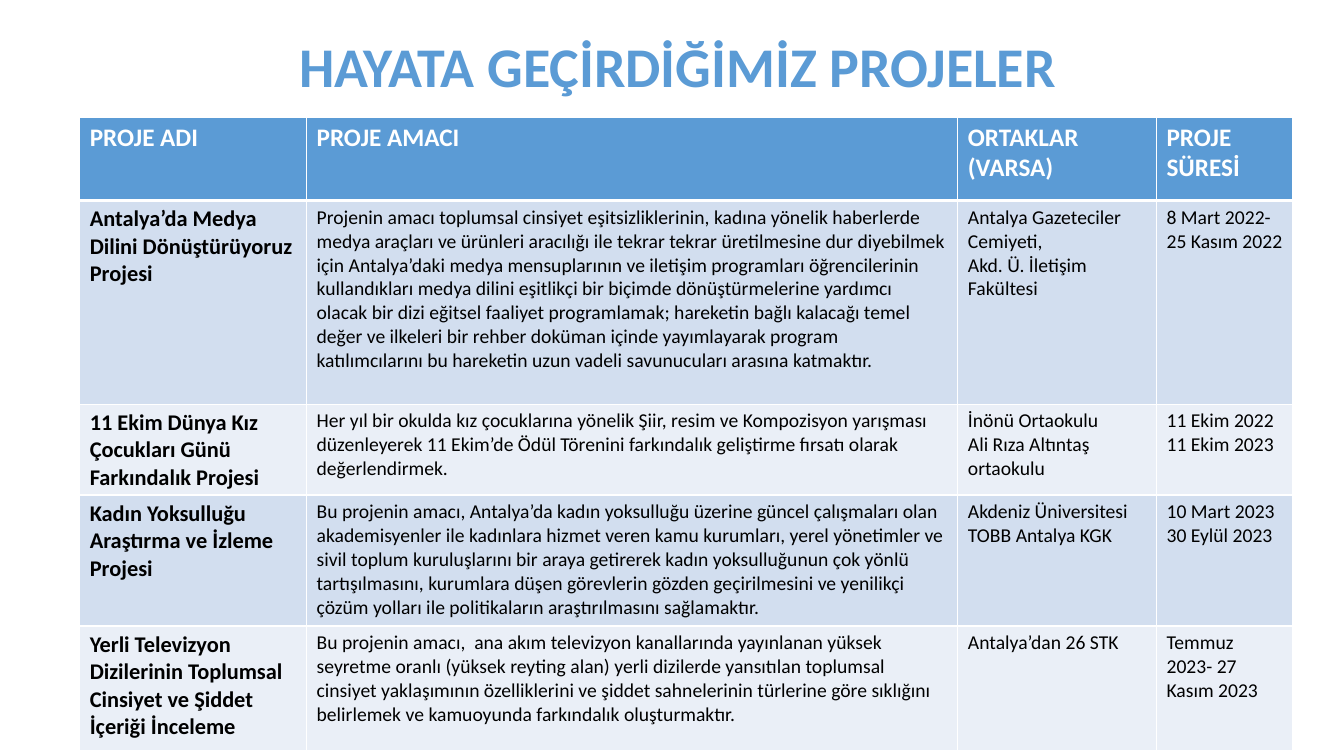
from dataclasses import dataclass

from lxml.etree import SubElement
from pptx import Presentation
from pptx.dml.color import RGBColor
from pptx.enum.text import MSO_ANCHOR, PP_ALIGN
from pptx.oxml.ns import qn
from pptx.slide import Slide
from pptx.table import _Cell
from pptx.util import Inches, Pt

PAGE_WIDTH = Inches(13.33)
PAGE_HEIGHT = Inches(7.5)
FONT = "Calibri"
COLORS = {
    "accent": "5B9BD5",
    "white": "FFFFFF",
    "black": "000000",
    "odd": "D2DEEF",
    "even": "EAEFF7",
}
COLUMN_SHARES = (16.88, 48.46, 14.78, 10.13)
ROW_SHARES = (11.07, 26.93, 11.6, 17.33, 16.53)


@dataclass(frozen=True)
class Area:
    left: float
    top: float
    width: float
    height: float


@dataclass(frozen=True)
class TextStyle:
    size: int
    color: str
    bold: bool = False


@dataclass(frozen=True)
class Project:
    name: str
    aim: str
    partners: str
    period: str


TITLE_AREA = Area(7.28, 3.2, 86.27, 11.87)
TABLE_AREA = Area(5.93, 15.47, sum(COLUMN_SHARES), sum(ROW_SHARES))
TITLE_STYLE = TextStyle(40, "accent", True)
HEADER_STYLE = TextStyle(18, "white", True)
NAME_STYLE = TextStyle(16, "black", True)
BODY_STYLE = TextStyle(14, "black")

HEADERS = ("PROJE ADI", "PROJE AMACI", "ORTAKLAR (VARSA)", "PROJE SÜRESİ")
PROJECTS = (
    Project(
        "Antalya’da Medya Dilini Dönüştürüyoruz Projesi",
        "Projenin amacı toplumsal cinsiyet eşitsizliklerinin, kadına yönelik haberlerde "
        "medya araçları ve ürünleri aracılığı ile tekrar tekrar üretilmesine dur diyebilmek "
        "için Antalya’daki medya mensuplarının ve iletişim programları öğrencilerinin "
        "kullandıkları medya dilini eşitlikçi bir biçimde dönüştürmelerine yardımcı "
        "olacak bir dizi eğitsel faaliyet programlamak; hareketin bağlı kalacağı temel "
        "değer ve ilkeleri bir rehber doküman içinde yayımlayarak program "
        "katılımcılarını bu hareketin uzun vadeli savunucuları arasına katmaktır.",
        "Antalya Gazeteciler Cemiyeti,\nAkd. Ü. İletişim Fakültesi",
        "8 Mart 2022-\n25 Kasım 2022",
    ),
    Project(
        "11 Ekim Dünya Kız Çocukları Günü Farkındalık Projesi",
        "Her yıl bir okulda kız çocuklarına yönelik Şiir, resim ve Kompozisyon yarışması "
        "düzenleyerek 11 Ekim’de Ödül Törenini farkındalık geliştirme fırsatı olarak "
        "değerlendirmek.",
        "İnönü Ortaokulu\nAli Rıza Altıntaş ortaokulu",
        "11 Ekim 2022\n11 Ekim 2023",
    ),
    Project(
        "Kadın Yoksulluğu Araştırma ve İzleme Projesi",
        "Bu projenin amacı, Antalya’da kadın yoksulluğu üzerine güncel çalışmaları olan "
        "akademisyenler ile kadınlara hizmet veren kamu kurumları, yerel yönetimler ve "
        "sivil toplum kuruluşlarını bir araya getirerek kadın yoksulluğunun çok yönlü "
        "tartışılmasını, kurumlara düşen görevlerin gözden geçirilmesini ve yenilikçi "
        "çözüm yolları ile politikaların araştırılmasını sağlamaktır.",
        "Akdeniz Üniversitesi\nTOBB Antalya KGK",
        "10 Mart 2023\n30 Eylül 2023",
    ),
    Project(
        "Yerli Televizyon Dizilerinin Toplumsal  Cinsiyet ve Şiddet İçeriği İnceleme",
        "Bu projenin amacı,  ana akım televizyon kanallarında yayınlanan yüksek "
        "seyretme oranlı (yüksek reyting alan) yerli dizilerde yansıtılan toplumsal "
        "cinsiyet yaklaşımının özelliklerini ve şiddet sahnelerinin türlerine göre sıklığını "
        "belirlemek ve kamuoyunda farkındalık oluşturmaktır.",
        "Antalya’dan 26 STK",
        "Temmuz 2023- 27 Kasım 2023",
    ),
)


def across(share: float) -> int:
    return round(PAGE_WIDTH * share / 100)


def down(share: float) -> int:
    return round(PAGE_HEIGHT * share / 100)


def frame(area: Area) -> tuple[int, int, int, int]:
    return across(area.left), down(area.top), across(area.width), down(area.height)


def write_text(text_frame, text: str, style: TextStyle) -> None:
    text_frame.text = text
    for para in text_frame.paragraphs:
        para.font.name = FONT
        para.font.size = Pt(style.size)
        para.font.bold = style.bold
        para.font.color.rgb = RGBColor.from_string(COLORS[style.color])


def add_borders(cell: _Cell, top: float, bottom: float) -> None:
    properties = cell._tc.get_or_add_tcPr()
    widths = {"a:lnL": 1, "a:lnR": 1, "a:lnT": top, "a:lnB": bottom}
    for position, (tag, width) in enumerate(widths.items()):
        line = SubElement(properties, qn(tag), w=str(Pt(width)))
        fill = SubElement(line, qn("a:solidFill"))
        SubElement(fill, qn("a:srgbClr"), val=COLORS["white"])
        properties.insert(position, line)


def fill_cell(cell: _Cell, text: str, style: TextStyle, color: str) -> None:
    write_text(cell.text_frame, text, style)
    cell.fill.solid()
    cell.fill.fore_color.rgb = RGBColor.from_string(COLORS[color])


def add_title(page: Slide) -> None:
    box = page.shapes.add_textbox(*frame(TITLE_AREA))
    box.text_frame.word_wrap = True
    box.text_frame.vertical_anchor = MSO_ANCHOR.MIDDLE
    write_text(box.text_frame, "HAYATA GEÇİRDİĞİMİZ PROJELER", TITLE_STYLE)
    para = box.text_frame.paragraphs[0]
    para.alignment = PP_ALIGN.CENTER
    para.line_spacing = 0.9


def add_projects(page: Slide) -> None:
    table = page.shapes.add_table(
        len(ROW_SHARES), len(COLUMN_SHARES), *frame(TABLE_AREA)
    ).table
    table.horz_banding = False
    for column, share in zip(table.columns, COLUMN_SHARES):
        column.width = across(share)
    for row, share in zip(table.rows, ROW_SHARES):
        row.height = down(share)

    for cell, header in zip(table.rows[0].cells, HEADERS):
        fill_cell(cell, header, HEADER_STYLE, "accent")
        add_borders(cell, top=1, bottom=3)
    for number, project in enumerate(PROJECTS, start=1):
        texts = (project.name, project.aim, project.partners, project.period)
        for column, text in enumerate(texts):
            cell = table.cell(number, column)
            style = BODY_STYLE if column else NAME_STYLE
            fill_cell(cell, text, style, "odd" if number % 2 else "even")
            add_borders(cell, top=3 if number == 1 else 1, bottom=1)


def main() -> None:
    deck = Presentation()
    deck.slide_width = PAGE_WIDTH
    deck.slide_height = PAGE_HEIGHT
    page = deck.slides.add_slide(deck.slide_layouts[6])
    add_title(page)
    add_projects(page)
    deck.save("out.pptx")


if __name__ == "__main__":
    main()
